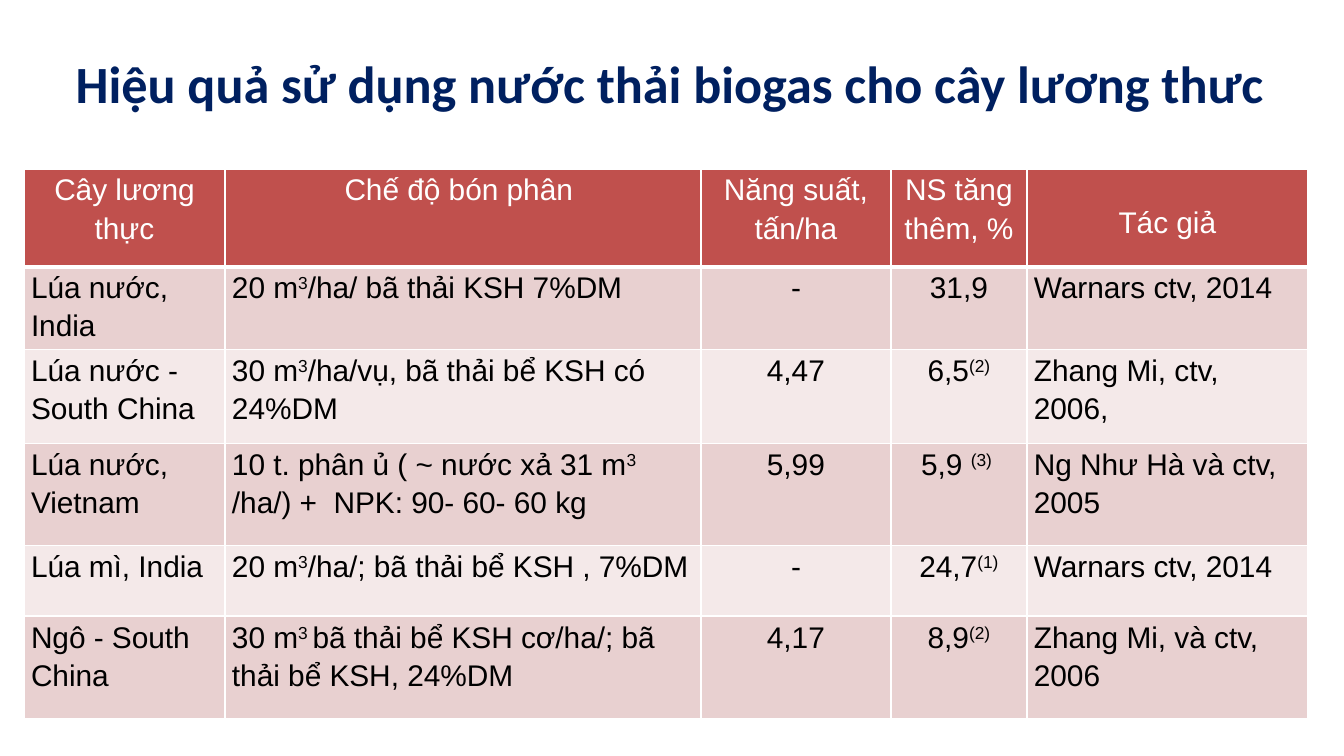
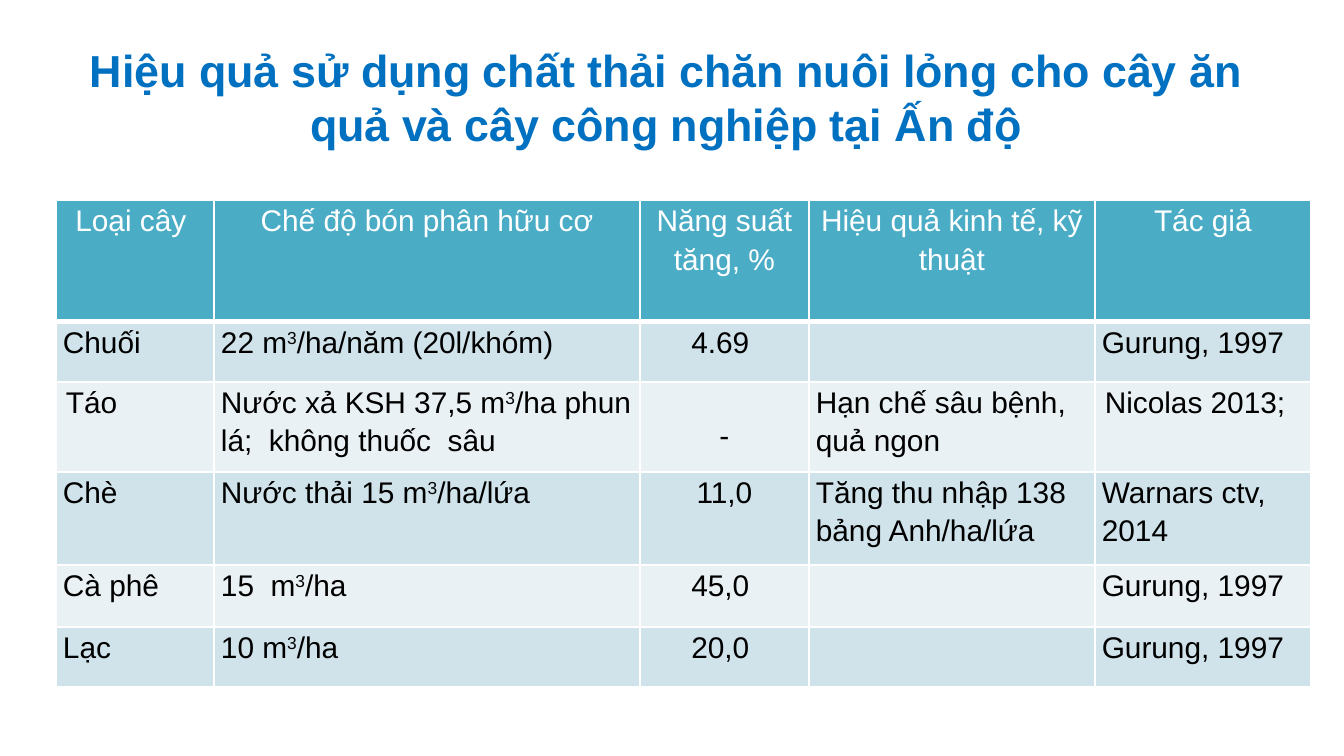
from pptx import Presentation
from pptx.dml.color import RGBColor as Rgb
from pptx.enum.text import MSO_ANCHOR as Anchor, PP_ALIGN as Align
from pptx.oxml import parse_xml
from pptx.oxml.ns import nsdecls
from pptx.util import Pt

SCALE = 914400 / 134.4
FONT = "Arial"
WHITE, BLACK = "FFFFFF", "000000"
TIGHT, LOOSE, LOW = (7, 0), (10, 5), (7, 33)

SLIDES = [
    dict(
        title="Hiệu quả sử dụng nước thải biogas cho cây lương thưc ",
        box=(24, 31, 1302, 104), font="Calibri", size=28, color="002060",
        fills=("C0504D", "E8D0D0", "F4E9E9"),
        at=(24, 169), cols=(201, 476, 190, 136, 281),
        rows=(98, 73, 94, 102, 71, 103), align="llccl",
        pads={(0, 4): LOW},
        cells=[
            ("Cây lương thực", "Chế độ bón phân ", "Năng suất,\ntấn/ha",
             "NS tăng thêm, %", "Tác giả"),
            ("Lúa nước, India", "20 m^3^/ha/ bã thải KSH 7%DM", "-",
             "31,9", "Warnars ctv, 2014"),
            ("Lúa nước - South China",
             "30 m^3^/ha/vụ, bã thải bể KSH có 24%DM", "4,47",
             "6,5^(2)", "Zhang Mi, ctv, 2006,"),
            ("Lúa nước, Vietnam",
             "10 t. phân ủ ( ~ nước xả 31 m^3^ /ha/) +  NPK: 90- 60- 60 kg",
             "5,99", "5,9 ^(3) ", "Ng Như Hà và ctv, 2005"),
            ("Lúa mì, India", "20 m^3^/ha/; bã thải bể KSH , 7%DM", "-",
             "24,7^(1)", "Warnars ctv, 2014"),
            ("Ngô - South China",
             "30 m^3 ^bã thải bể KSH cơ/ha/; bã thải bể KSH, 24%DM",
             "4,17", "8,9^(2)", "Zhang Mi, và ctv, 2006"),
        ],
    ),
    dict(
        title="Hiệu quả sử dụng chất thải chăn nuôi lỏng cho cây ăn quả "
              "và cây công nghiệp tại Ấn độ",
        box=(36, 46, 1260, 101), font=FONT, size=24, color="0070C0",
        fills=("4BACC6", "D0E3EA", "E9F1F5"),
        at=(56, 200), cols=(158, 426, 169, 286, 216),
        rows=(122, 60, 90, 93, 62, 60), align="llcll",
        pads={(2, 0): LOOSE, (2, 2): LOW, (2, 4): LOOSE},
        cells=[
            ("Loại cây ", "Chế độ bón phân hữu cơ", "Năng suất tăng, %",
             "Hiệu quả kinh tế, kỹ thuật", "Tác giả"),
            ("Chuối", "22 m^3^/ha/năm (20l/khóm)", "4.69 ", "",
             "Gurung, 1997"),
            ("Táo", "Nước xả KSH 37,5 m^3^/ha phun lá;  không thuốc  sâu",
             "-", "Hạn chế sâu bệnh, quả ngon", "Nicolas 2013;"),
            ("Chè", "Nước thải 15 m^3^/ha/lứa", "11,0",
             "Tăng thu nhập 138 bảng Anh/ha/lứa", "Warnars ctv, 2014"),
            ("Cà phê ", "15  m^3^/ha ", "45,0 ", "", "Gurung, 1997"),
            ("Lạc ", "10 m^3^/ha ", "20,0 ", "", "Gurung, 1997"),
        ],
    ),
]


def px(num):
    return round(num * SCALE)


def rgb(code):
    return Rgb.from_string(code)


def style(para, name, size, color, bold, align):
    para.alignment = align
    font = para.font
    font.name, font.size, font.bold = name, Pt(size), bold
    font.color.rgb = rgb(color)


def pad(part, side, top):
    part.margin_left = part.margin_right = px(side)
    part.margin_top = px(top)


def add_title(slide, data):
    frame = slide.shapes.add_textbox(*map(px, data["box"])).text_frame
    frame.word_wrap = True
    frame.vertical_anchor = Anchor.MIDDLE
    pad(frame, 12, 6)
    frame.margin_bottom = px(6)
    frame.text = data["title"]
    style(frame.paragraphs[0], data["font"], data["size"], data["color"],
          True, Align.CENTER)


def add_edges(cell, base):
    props = cell._tc.get_or_add_tcPr()
    for side, width in zip("LRTB", (1, 1, 1, base)):
        props.append(parse_xml(
            f'<a:ln{side} {nsdecls("a")} w="{Pt(width)}"><a:solidFill>'
            f'<a:srgbClr val="{WHITE}"/></a:solidFill></a:ln{side}>'))


def fill_cell(cell, text, head, fill, align, inset):
    pad(cell, *inset)
    cell.margin_bottom = px(5 if inset == LOOSE else 0)
    cell.vertical_anchor = Anchor.TOP
    add_edges(cell, 3 if head else 1)
    cell.fill.solid()
    cell.fill.fore_color.rgb = rgb(fill)
    frame = cell.text_frame
    for i, line in enumerate(text.split("\n")):
        para = frame.add_paragraph() if i else frame.paragraphs[0]
        para.line_spacing = 1.0 if inset == LOOSE else 1.15
        style(para, FONT, 16, WHITE if head else BLACK, False, align)
        for j, part in enumerate(line.split("^")):
            if part:
                run = para.add_run()
                run.text = part
                if j % 2:
                    run.font._element.set("baseline", "30000")


def add_grid(slide, data):
    cols, rows = data["cols"], data["rows"]
    dims = map(px, (*data["at"], sum(cols), sum(rows)))
    table = slide.shapes.add_table(len(rows), len(cols), *dims).table
    for col, width in zip(table.columns, cols):
        col.width = px(width)
    for row, height in zip(table.rows, rows):
        row.height = px(height)
    top, odd, even = data["fills"]
    for r, line in enumerate(data["cells"]):
        fill = top if r == 0 else odd if r % 2 else even
        for c, text in enumerate(line):
            mid = r == 0 or data["align"][c] == "c"
            fill_cell(table.cell(r, c), text, r == 0, fill,
                      Align.CENTER if mid else Align.LEFT,
                      data["pads"].get((r, c), TIGHT))


def main():
    deck = Presentation()
    deck.slide_width, deck.slide_height = px(1344), px(756)
    for data in SLIDES:
        slide = deck.slides.add_slide(deck.slide_layouts[6])
        add_title(slide, data)
        add_grid(slide, data)
    deck.save("out.pptx")


if __name__ == "__main__":
    main()
